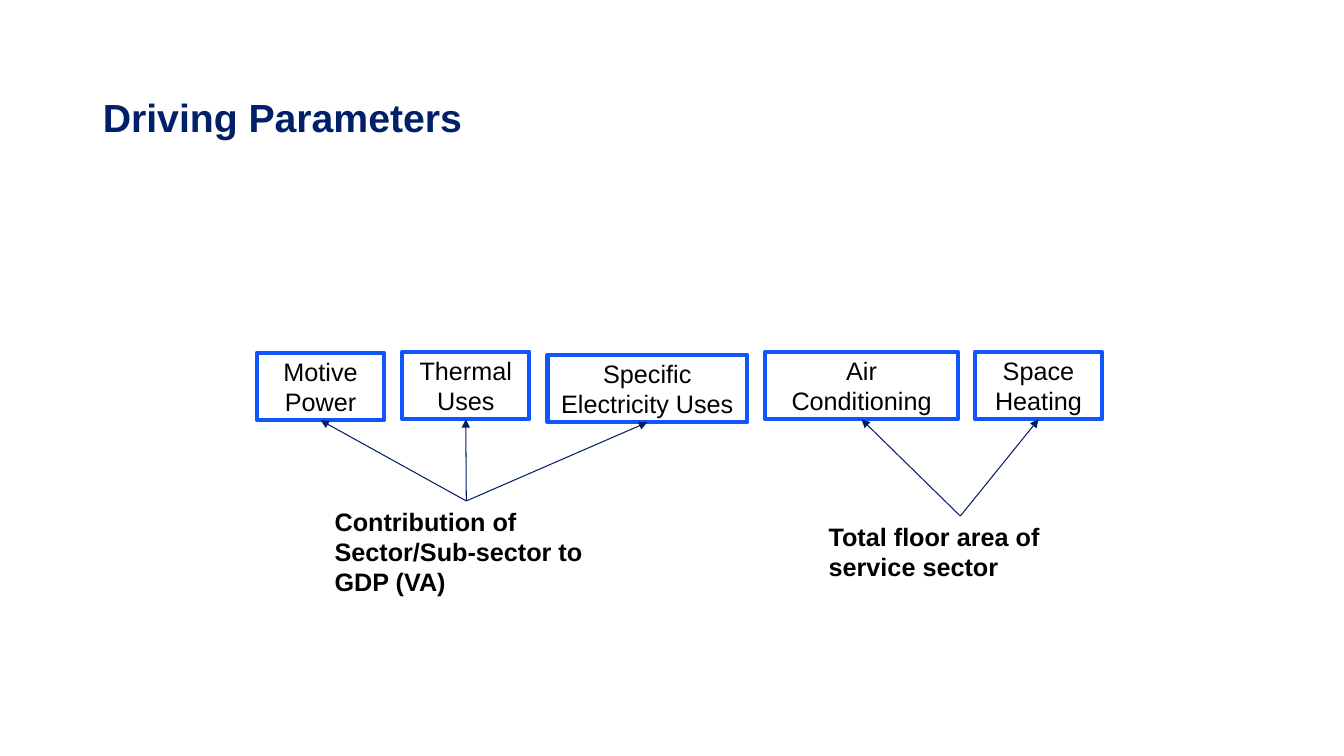
from lxml.etree import SubElement as Sub
from pptx import Presentation
from pptx.dml.color import RGBColor
from pptx.enum.shapes import MSO_CONNECTOR as Link, MSO_SHAPE as Form
from pptx.enum.text import MSO_ANCHOR as Anchor, MSO_AUTO_SIZE as Fit, PP_ALIGN as Align
from pptx.oxml.ns import qn
from pptx.util import Inches, Pt

NAVY = RGBColor(0x01, 0x20, 0x69)
INK = RGBColor(0x00, 0x1F, 0x68)
BLUE = RGBColor(0x0F, 0x56, 0xFD)
BLACK = RGBColor(0, 0, 0)
WHITE = RGBColor(255, 255, 255)
TOP, BOTTOM = 0, 2  # connection sites of a rectangle


class Deck:
    font = "Arial"
    size = 18

    def __init__(self):
        self.show = Presentation()
        self.show.slide_width = Inches(13.33)
        self.show.slide_height = Inches(7.5)
        self.slide = self.show.slides.add_slide(self.show.slide_layouts[5])

    def put(self, shape, text, size, color, bold, align, anchor):
        frame = shape.text_frame
        frame.word_wrap = True
        frame.vertical_anchor = anchor
        para = frame.paragraphs[0]
        para.alignment = align
        run = para.add_run()
        run.text = text
        font = run.font
        font.name, font.size, font.bold = self.font, Pt(size), bold
        font.color.rgb = color
        return para

    def title(self, text, left, top, width, height):
        head = self.slide.shapes.title
        head.left, head.top = Inches(left), Inches(top)
        head.width, head.height = Inches(width), Inches(height)
        para = self.put(head, text, 28, NAVY, True, Align.LEFT, Anchor.BOTTOM)
        para.line_spacing = 0.9
        head.text_frame.auto_size = Fit.NONE

    def box(self, text, left, top, width, height=0.67):
        rect = self.slide.shapes.add_shape(
            Form.RECTANGLE, Inches(left), Inches(top), Inches(width), Inches(height))
        rect.shadow.inherit = False
        rect.fill.solid()
        rect.fill.fore_color.rgb = WHITE
        rect.line.color.rgb = BLUE
        rect.line.width = Pt(3)
        self.put(rect, text, self.size, BLACK, False, Align.CENTER, Anchor.MIDDLE)
        return rect

    def label(self, text, left, top, width, height):
        note = self.slide.shapes.add_textbox(
            Inches(left), Inches(top), Inches(width), Inches(height))
        self.put(note, text, self.size, BLACK, True, Align.LEFT, Anchor.TOP)
        note.text_frame.auto_size = Fit.SHAPE_TO_FIT_TEXT
        return note

    def arrow(self, start, end):
        link = self.slide.shapes.add_connector(Link.STRAIGHT, 0, 0, 0, 0)
        link.begin_connect(start, TOP)
        link.end_connect(end, BOTTOM)
        link.line.color.rgb = INK
        link.line.width = Pt(0.75)
        props = link.element.spPr
        Sub(props.find(qn("a:ln")), qn("a:tailEnd"), type="triangle")
        Sub(props, qn("a:effectLst"))


def main():
    deck = Deck()
    deck.title("Driving Parameters", 0.92, 0, 11.5, 1.45)

    # Energy uses
    motive = deck.box("Motive Power", 2.55, 3.5, 1.26)
    thermal = deck.box("Thermal Uses", 3.99, 3.49, 1.26)
    power = deck.box("Specific Electricity Uses", 5.43, 3.52, 1.98)
    cooling = deck.box("Air Conditioning", 7.59, 3.49, 1.91)
    heating = deck.box("Space Heating", 9.67, 3.49, 1.26)

    # Drivers
    value = deck.label("Contribution of Sector/Sub-sector to GDP (VA)", 3.22, 4.97, 2.81, 1.01)
    area = deck.label("Total floor area of service sector", 8.12, 5.12, 2.81, 0.71)

    # Arrows from each driver to its uses
    for driver, uses in ((value, (motive, thermal, power)), (area, (cooling, heating))):
        for use in uses:
            deck.arrow(driver, use)

    deck.show.save("out.pptx")


if __name__ == "__main__":
    main()
